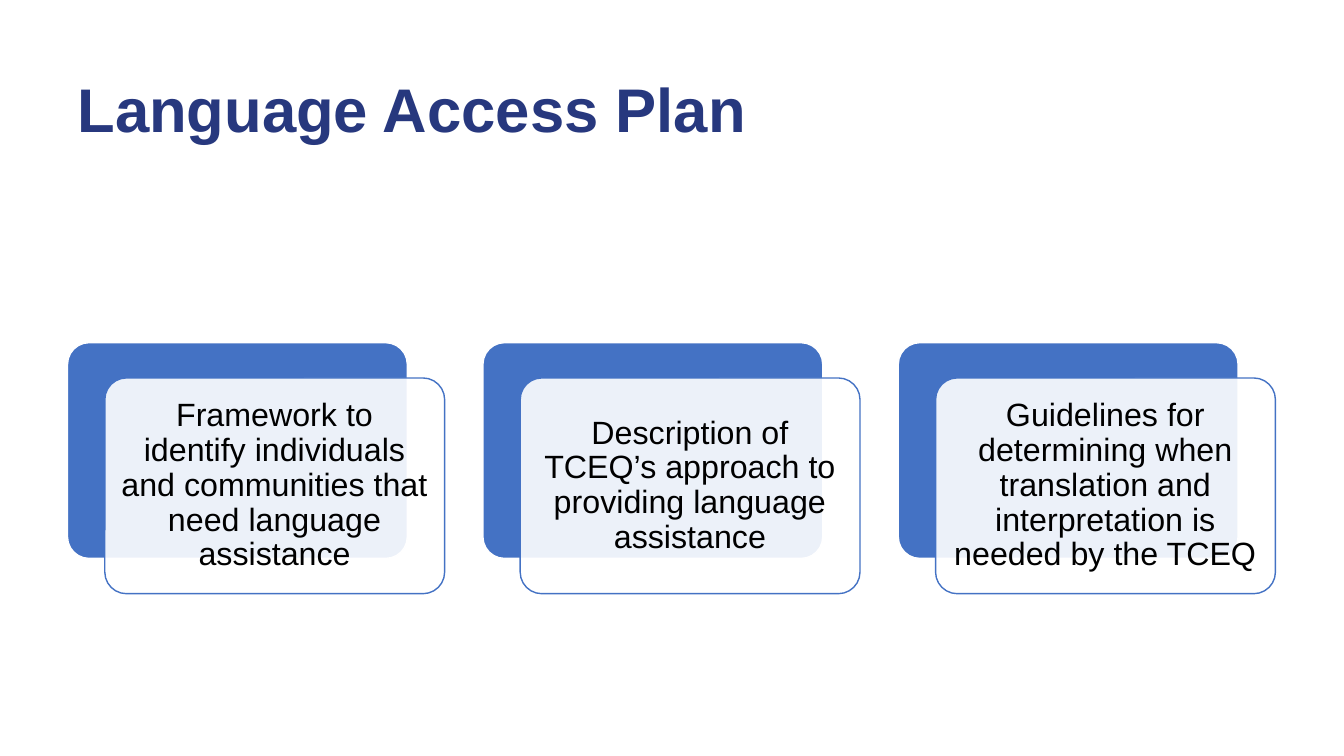
from dataclasses import dataclass

from lxml import etree
from pptx import Presentation
from pptx import util as u
from pptx.dml.color import RGBColor
from pptx.enum import shapes, text
from pptx.oxml.ns import qn


@dataclass(frozen=True)
class Theme:
    font: str = "Arial"
    title_color: RGBColor = RGBColor(0x27, 0x38, 0x7E)
    accent: RGBColor = RGBColor(0x44, 0x72, 0xC4)
    white: RGBColor = RGBColor(0xFF, 0xFF, 0xFF)
    body_color: RGBColor = RGBColor(0, 0, 0)
    title_size: int = 44
    body_size: int = 23
    card_opacity: int = 90


class SlideBuilder:
    def __init__(self, slide, theme):
        self.slide = slide
        self.theme = theme

    def style_paragraph(self, paragraph, size, color, bold=False):
        paragraph.line_spacing = 0.9
        font = paragraph.font
        font.name = self.theme.font
        font.size = u.Pt(size)
        font.bold = bold
        font.color.rgb = color

    def title(self, wording, left, top, width, height):
        box = self.slide.shapes.add_textbox(
            u.Inches(left), u.Inches(top), u.Inches(width), u.Inches(height))
        box.text_frame.word_wrap = True
        paragraph = box.text_frame.paragraphs[0]
        paragraph.text = wording
        self.style_paragraph(
            paragraph, self.theme.title_size, self.theme.title_color, bold=True)

    def panel(self, left, top, width, height, fill, line, opacity=100):
        """Add a rounded rectangle; opacity is a percentage."""
        shape = self.slide.shapes.add_shape(
            shapes.MSO_SHAPE.ROUNDED_RECTANGLE,
            u.Inches(left), u.Inches(top), u.Inches(width), u.Inches(height))
        shape.shadow.inherit = False
        shape.adjustments[0] = 0.1
        shape.fill.solid()
        shape.fill.fore_color.rgb = fill
        shape.line.color.rgb = line
        shape.line.width = u.Pt(1)
        if opacity < 100:
            color = shape.fill._xPr.find(qn("a:solidFill"))[0]
            etree.SubElement(color, qn("a:alpha"), val=str(opacity * 1000))
        return shape

    def card(self, wording, left, top, width, height):
        """Add a solid panel with a translucent text panel offset over it."""
        theme = self.theme
        self.panel(left, top, width, height, theme.accent, theme.white)
        front = self.panel(left + 0.37, top + 0.35, width, height,
                           theme.white, theme.accent, theme.card_opacity)
        frame = front.text_frame
        frame.word_wrap = True
        frame.vertical_anchor = text.MSO_ANCHOR.MIDDLE
        frame.margin_left = frame.margin_right = u.Inches(0.1)
        frame.margin_top = frame.margin_bottom = u.Inches(0.1)
        paragraph = frame.paragraphs[0]
        paragraph.text = wording
        paragraph.alignment = text.PP_ALIGN.CENTER
        self.style_paragraph(paragraph, theme.body_size, theme.body_color)


PLAN_PARTS = [
    "Framework to identify individuals and communities that need language assistance",
    "Description of TCEQ’s approach to providing language assistance",
    "Guidelines for determining when translation and interpretation is needed by the TCEQ",
]


def main():
    presentation = Presentation()
    presentation.slide_width = u.Inches(13.33)
    presentation.slide_height = u.Inches(7.5)
    slide = presentation.slides.add_slide(presentation.slide_layouts[6])
    builder = SlideBuilder(slide, Theme())

    builder.title("Language Access Plan", 0.67, 0.74, 11.99, 1.45)
    card_pitch = 4.12
    for index, wording in enumerate(PLAN_PARTS):
        builder.card(wording, 0.67 + index * card_pitch, 3.4, 3.37, 2.14)

    presentation.save("out.pptx")


if __name__ == "__main__":
    main()
